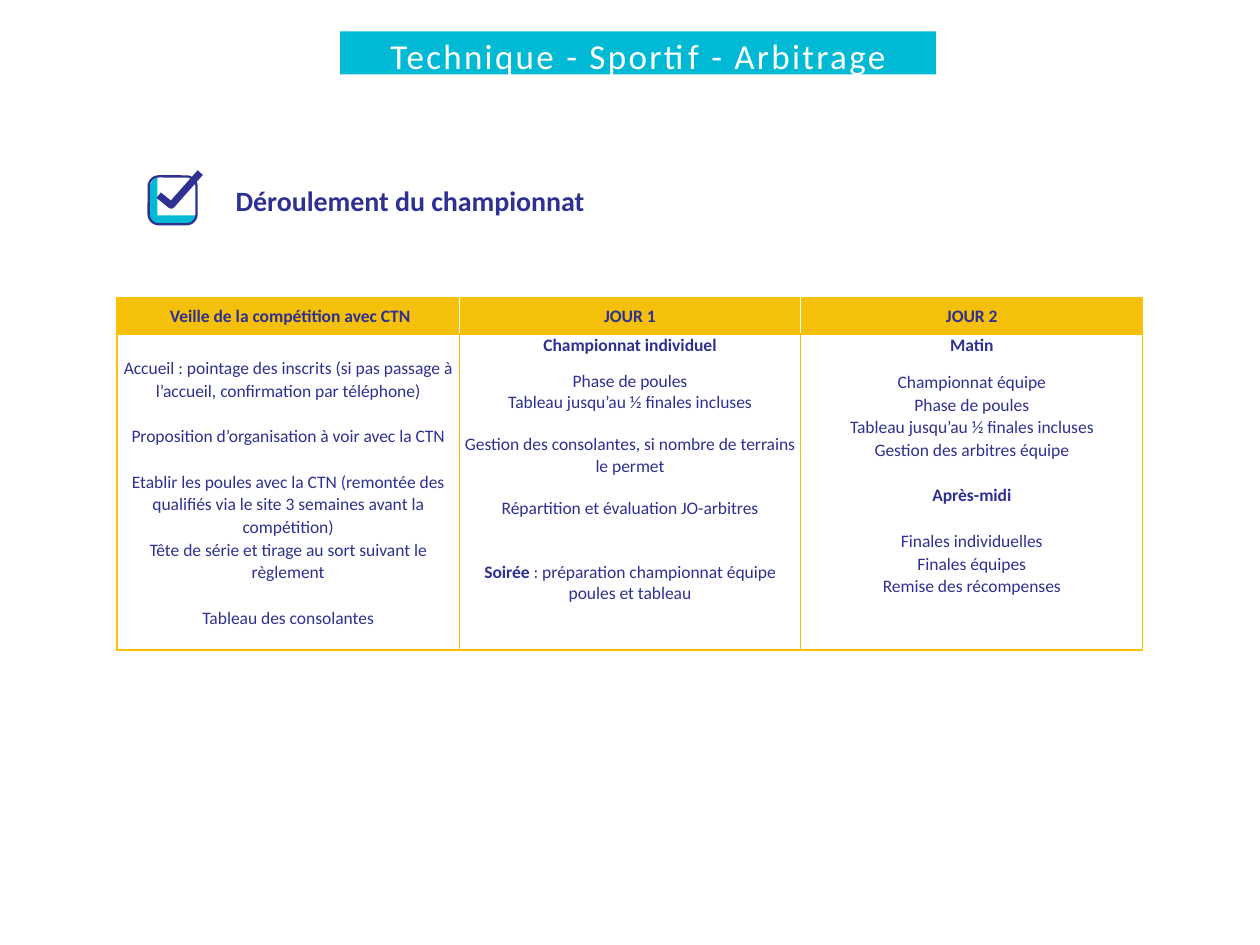
from dataclasses import dataclass
from lxml.etree import SubElement
from pptx import Presentation
from pptx.dml.color import RGBColor
from pptx.enum.shapes import MSO_SHAPE
from pptx.enum.text import MSO_ANCHOR, PP_ALIGN
from pptx.oxml.ns import qn
from pptx.util import Emu, Inches, Pt


@dataclass(frozen=True)
class Theme:
    font: str = "Calibri"
    navy: str = "2E3092"
    cyan: str = "00BAD5"
    gold: str = "F4C009"
    frame: str = "FFC000"
    white: str = "FFFFFF"
    title: int = 20
    head: int = 16
    body: int = 10


COLS, ROWS = 100, 75
LINE = 1.07
GAP = 13
STEP = 12.2
AFTER = 8

HEADS = [" Veille de la compétition avec CTN", "JOUR 1", "JOUR 2"]

EVE = [
    (0, [("Accueil : pointage des inscrits (si pas passage à l’accueil, confirmation par téléphone)", False)]),
    (GAP, [("Proposition d’organisation à voir avec la CTN", False)]),
    (GAP, [("Etablir les poules avec la CTN (remontée des qualifiés via le site 3 semaines avant la compétition)", False)]),
    (0, [("Tête de série et tirage au sort suivant le règlement", False)]),
    (GAP, [("Tableau des consolantes", False)]),
]
FIRST = [
    (0, [("Championnat individuel", True)]),
    (AFTER, [("Phase de poules", False)]),
    (0, [("Tableau jusqu’au ½ finales incluses", False)]),
    (STEP, [("Gestion des consolantes, si nombre de terrains le permet", False)]),
    (STEP, [("Répartition et évaluation JO-arbitres", False)]),
    (2 * STEP, [("Soirée", True), (" : préparation championnat équipe poules et tableau", False)]),
]
SECOND = [
    (0, [("Matin", True)]),
    (AFTER, [("Championnat équipe", False)]),
    (0, [("Phase de poules", False)]),
    (0, [("Tableau jusqu’au ½ finales incluses", False)]),
    (0, [("Gestion des arbitres équipe", False)]),
    (GAP, [("Après-midi", True)]),
    (GAP, [("Finales individuelles", False)]),
    (0, [("Finales équipes", False)]),
    (0, [("Remise des récompenses", False)]),
]


class Deck:
    def __init__(self, theme):
        self.theme = theme
        self.file = Presentation()
        self.file.slide_width, self.file.slide_height = Inches(10), Inches(7.5)
        self.slide = self.file.slides.add_slide(self.file.slide_layouts[6])

    def x(self, cols):
        return Emu(round(self.file.slide_width * cols / COLS))

    def y(self, rows):
        return Emu(round(self.file.slide_height * rows / ROWS))

    def area(self, left, top, width, height):
        return self.x(left), self.y(top), self.x(width), self.y(height)

    def pad(self, item, left=0, top=0, right=0):
        item.margin_left, item.margin_right = self.x(left), self.x(right)
        item.margin_top, item.margin_bottom = self.y(top), 0

    def run(self, para, text, size, color, bold=False, track=0):
        run = para.add_run()
        run.text = text
        run.font.name, run.font.size, run.font.bold = self.theme.font, Pt(size), bold
        run.font.color.rgb = RGBColor.from_string(color)
        if track:
            run.font._element.set("spc", str(round(track * 100)))

    def paint(self, shape, fill=None, line=None, width=1):
        shape.shadow.inherit = False
        if fill:
            shape.fill.solid()
            shape.fill.fore_color.rgb = RGBColor.from_string(fill)
        else:
            shape.fill.background()
        if line:
            shape.line.color.rgb = RGBColor.from_string(line)
            shape.line.width = Pt(width)
        else:
            shape.line.fill.background()

    def banner(self, area, text):
        shape = self.slide.shapes.add_shape(MSO_SHAPE.RECTANGLE, *self.area(*area))
        self.paint(shape, self.theme.cyan)
        frame = shape.text_frame
        self.pad(frame, top=0.2)
        frame.word_wrap, frame.vertical_anchor = True, MSO_ANCHOR.TOP
        para = frame.paragraphs[0]
        para.alignment = PP_ALIGN.CENTER
        self.run(para, text, self.theme.title, self.theme.white, track=1.3)

    def heading(self, area, text):
        frame = self.slide.shapes.add_textbox(*self.area(*area)).text_frame
        self.pad(frame, left=0.1, top=0.25)
        frame.word_wrap = True
        self.run(frame.paragraphs[0], text, self.theme.head, self.theme.navy, True)

    def outline(self, group, points, close, **look):
        spots = [(self.x(a), self.y(b)) for a, b in points]
        pen = group.shapes.build_freeform(*spots[0])
        pen.add_line_segments(spots[1:], close=close)
        self.paint(pen.convert_to_shape(), **look)

    def check(self, left, top, side):
        group = self.slide.shapes.add_group_shape()
        navy = self.theme.navy
        right, base = left + side, top + side
        shade = [
            (left + 0.7, top + 0.1), (left + 0.4, top + 0.2), (left + 0.1, top + 0.7),
            (left + 0.1, base - 0.5), (left + 0.2, base - 0.2), (left + 0.6, base),
            (right - 0.4, base), (right, base - 0.5), (right, base - 0.7), (left + 0.7, base - 0.7),
        ]
        self.outline(group, shade, True, fill=self.theme.cyan)
        box = group.shapes.add_shape(MSO_SHAPE.ROUNDED_RECTANGLE, *self.area(left, top, side, side))
        box.adjustments[0] = 0.21
        self.paint(box, line=navy, width=1.3)
        tick = [(left + 0.8, top + 1.5), (left + 1.8, top + 2.3), (left + 4.1, top - 0.3)]
        self.outline(group, tick, False, line=navy, width=4)

    def edge(self, cell, side, color, width):
        line = SubElement(cell._tc.get_or_add_tcPr(), qn("a:ln" + side), w=str(Pt(width)))
        SubElement(SubElement(line, qn("a:solidFill")), qn("a:srgbClr"), val=color)

    def cell(self, cell, paras, head, first, last, top):
        theme = self.theme
        rule = (theme.white if head else theme.gold, 0.5)
        frame = (theme.frame, 1)
        self.edge(cell, "L", *(frame if first else rule))
        self.edge(cell, "R", *(frame if last else rule))
        self.edge(cell, "T", *frame)
        self.edge(cell, "B", *frame)
        if head:
            cell.fill.solid()
            cell.fill.fore_color.rgb = RGBColor.from_string(theme.gold)
        else:
            cell.fill.background()
        cell.vertical_anchor = MSO_ANCHOR.MIDDLE if head else MSO_ANCHOR.TOP
        self.pad(cell, 0.4, top, 0.4)
        for i, (gap, runs, space) in enumerate(paras):
            para = cell.text_frame.paragraphs[0] if i == 0 else cell.text_frame.add_paragraph()
            para.alignment, para.line_spacing = PP_ALIGN.CENTER, space
            if gap:
                para.space_before = Pt(gap)
            for text, bold in runs:
                self.run(para, text, theme.body, theme.navy, bold)

    def table(self, area, heads, bodies, head):
        count = len(heads)
        table = self.slide.shapes.add_table(2, count, *self.area(*area)).table
        table.first_row = table.horz_banding = False
        table.rows[0].height, table.rows[1].height = self.y(head), self.y(area[3] - head)
        for col, (name, (paras, top, tight)) in enumerate(zip(heads, bodies)):
            table.columns[col].width = self.x(area[2] / count)
            ends = (col == 0, col == count - 1)
            self.cell(table.cell(0, col), [(0, [(name, True)], LINE)], True, *ends, 0)
            body = [(gap, runs, 1 if tight and i else LINE) for i, (gap, runs) in enumerate(paras)]
            self.cell(table.cell(1, col), body, False, *ends, top)


def main():
    deck = Deck(Theme())
    bodies = [(EVE, 1.8, False), (FIRST, 0, True), (SECOND, 0, False)]
    deck.table((9.3, 23.6, 81.4, 28), HEADS, bodies, 2.9)
    deck.check(11.8, 14, 3.8)
    deck.heading((18.6, 14.3, 28.1, 2.8), "Déroulement du championnat")
    deck.banner((27, 2.5, 47.3, 3.4), "Technique - Sportif - Arbitrage")
    deck.file.save("out.pptx")


if __name__ == "__main__":
    main()
